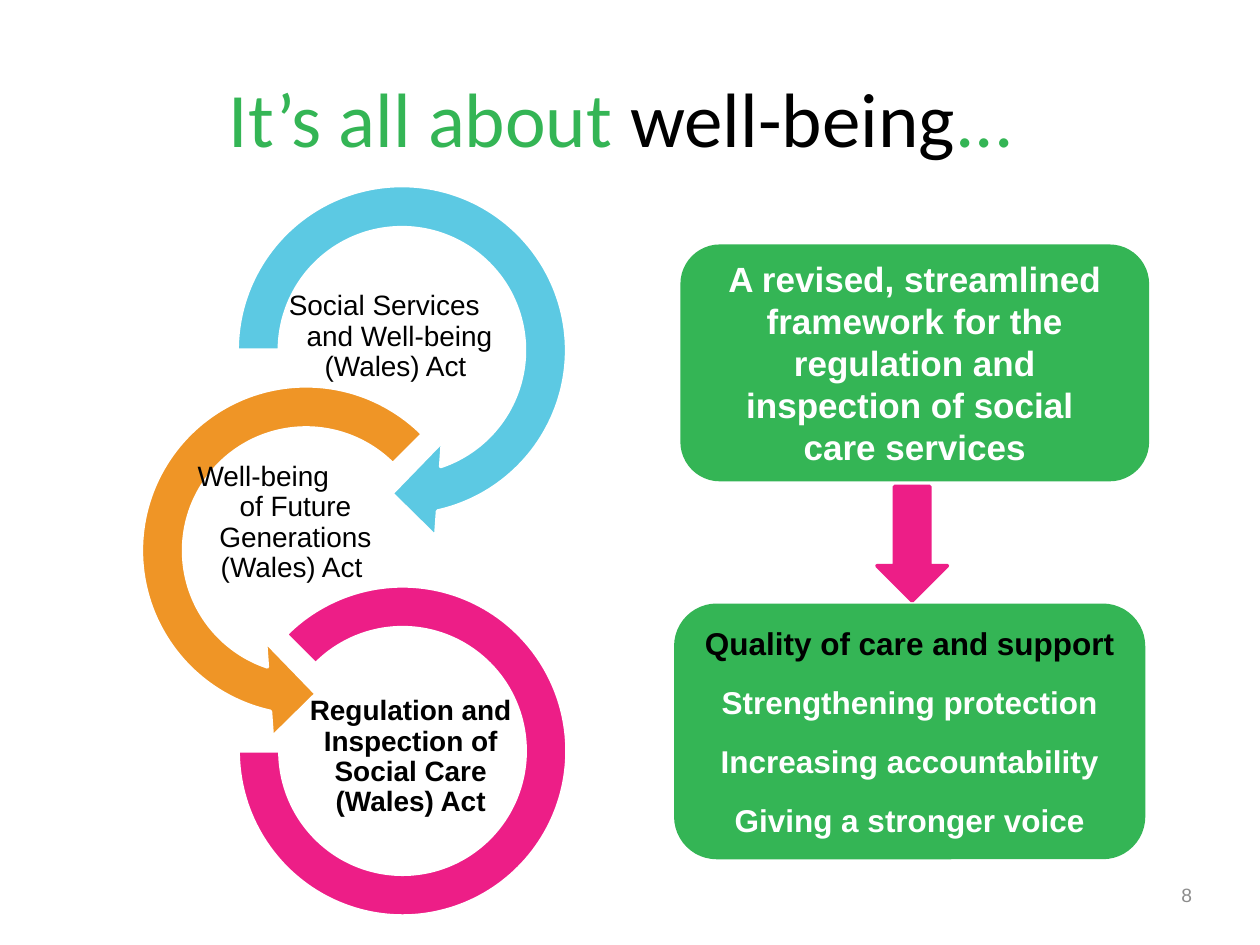
"""Builds a slide on three Acts about well-being and the aims of the revised framework."""
from pptx import Presentation
from pptx.dml.color import RGBColor
from pptx.enum.shapes import MSO_SHAPE
from pptx.enum.text import MSO_ANCHOR, PP_ALIGN
from pptx.util import Inches, Pt

CENTER, RIGHT = PP_ALIGN.CENTER, PP_ALIGN.RIGHT
MIDDLE = MSO_ANCHOR.MIDDLE
ROUNDED, DOWN_ARROW = MSO_SHAPE.ROUNDED_RECTANGLE, MSO_SHAPE.DOWN_ARROW
ARROW, LEFT_ARROW = MSO_SHAPE.CIRCULAR_ARROW, MSO_SHAPE.LEFT_CIRCULAR_ARROW
ARC = MSO_SHAPE.BLOCK_ARC
COLORS = {
    "green": "34B555", "blue": "5CC9E3", "orange": "EF9526", "pink": "ED1E87",
    "black": "000000", "white": "FFFFFF", "gray": "8C8C8C",
}

deck = Presentation()
deck.slide_width, deck.slide_height = Inches(10), Inches(7.5)
COLUMN, ROW = deck.slide_width / 100, deck.slide_height / 75
page = deck.slides.add_slide(deck.slide_layouts[6])


def add_figure(kind, place, fill=None, line=None, adjustments=()):
    left, top, width, height = place
    area = int(left * COLUMN), int(top * ROW), int(width * COLUMN), int(height * ROW)
    if kind is None:
        return page.shapes.add_textbox(*area)
    figure = page.shapes.add_shape(kind, *area)
    figure.shadow.inherit = False
    figure.fill.solid()
    figure.fill.fore_color.rgb = RGBColor.from_string(COLORS[fill])
    if line:
        figure.line.color.rgb = RGBColor.from_string(COLORS[line])
        figure.line.width = Pt(2)
    else:
        figure.line.fill.background()
    for index, value in enumerate(adjustments):
        figure.adjustments[index] = value
    return figure


def write(box, paragraphs, size, font="Arial", bold=False, align=CENTER, inset=0.1, spacing=None):
    frame = box.text_frame
    formats = {"word_wrap": True, "vertical_anchor": MIDDLE,
               "margin_left": Inches(inset), "margin_right": Inches(inset),
               "margin_top": Inches(inset / 2), "margin_bottom": Inches(inset / 2)}
    for name, value in formats.items():
        setattr(frame, name, value)
    for index, (spans, after, left_margin, right_margin) in enumerate(paragraphs):
        para = frame.paragraphs[0] if index == 0 else frame.add_paragraph()
        para.alignment, para.line_spacing, para.space_after = align, spacing, Pt(after)
        for side, margin in {"marL": left_margin, "marR": right_margin, "indent": 0}.items():
            para._p.get_or_add_pPr().set(side, str(Inches(margin)))
        for text, color in spans:
            for part, piece in enumerate(text.split("\n")):
                if part:
                    para.add_line_break()
                span = para.add_run()
                span.text = piece
                for name, value in {"name": font, "size": Pt(size), "bold": bold}.items():
                    setattr(span.font, name, value)
                span.font.color.rgb = RGBColor.from_string(COLORS[color])


plain_texts = [
    ((72.3, 69, 23.3, 4), [("8", "gray")], 11, "Arial", RIGHT),
    ((5, 3, 90, 12.5), [("It’s all about ", "green"), ("well-being", "black"), ("... ", "green")],
     44, "Calibri", CENTER),
]
for place, spans, size, font, align in plain_texts:
    write(add_figure(None, place), [(spans, 0, 0, 0)], size, font, align=align)

acts = [
    (ARROW, (16.7, 12.6, 30.4, 30.4), "blue", (0.11, 11.42, 45, 108, 0.125),
     (22.1, 22.3, 19.2, 8.9), False,
     [("Social Services", 0, 0, 0.24), ("and Well-being (Wales) Act ", 3, 0, 0)]),
    (LEFT_ARROW, (9.1, 28.5, 30.4, 30.4), "orange", (0.11, 11.42, 63, 189, 0.125),
     (15.4, 36.7, 16.1, 9.6), False,
     [("Well-being", 0, 0, 0.51), ("of Future Generations (Wales) Act ", 3, 0, 0)]),
    (ARC, (18.9, 46.5, 26.1, 26.2), "pink", (135, 108, 0.127),
     (24.3, 54.8, 16.6, 10.6), True,
     [("Regulation and Inspection of Social Care (Wales) Act", 3, 0, 0)]),
]
for kind, ring, fill, adjustments, place, bold, lines in acts:
    add_figure(kind, ring, fill, "white", adjustments)
    paragraphs = [([(text, "black")], *gaps) for text, *gaps in lines]
    write(add_figure(None, place), paragraphs, 16, bold=bold, inset=0.01, spacing=0.9)

panels = [
    ((54, 19.4, 37.2, 18.8), 20,
     [("A revised, streamlined framework for the regulation and inspection of social \ncare services",
       "white")]),
    ((53.5, 47.9, 37.4, 20.3), 18,
     [("Quality of care and support", "black"), ("Strengthening protection", "white"),
      ("Increasing accountability", "white"), ("Giving a stronger voice", "white")]),
]
for place, size, lines in panels:
    panel = add_figure(ROUNDED, place, "green")
    write(panel, [([line], 12, 0, 0) for line in lines], size, bold=True)

add_figure(DOWN_ARROW, (69.6, 38.6, 5.6, 9.1), "pink", "pink")

deck.save("out.pptx")
